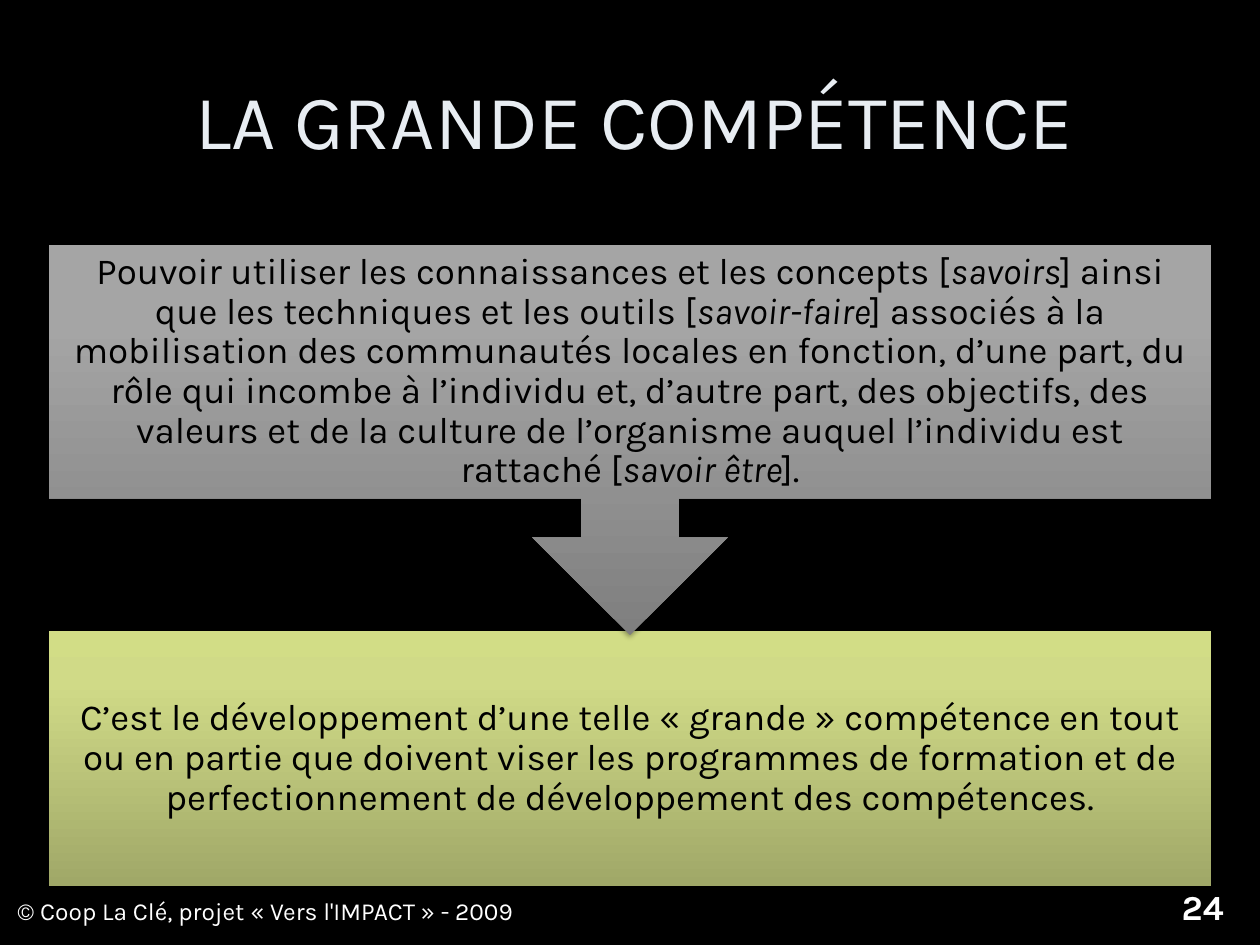
from lxml import etree
from pptx import Presentation
from pptx.dml.color import RGBColor
from pptx.enum.shapes import MSO_SHAPE
from pptx.enum.text import MSO_ANCHOR, PP_ALIGN
from pptx.oxml.ns import qn
from pptx.util import Inches, Pt

RECTANGLE = MSO_SHAPE.RECTANGLE
ARROW_CALLOUT = MSO_SHAPE.UP_ARROW_CALLOUT
LEFT, CENTER, RIGHT = PP_ALIGN.LEFT, PP_ALIGN.CENTER, PP_ALIGN.RIGHT
TOP, MIDDLE = MSO_ANCHOR.TOP, MSO_ANCHOR.MIDDLE

FONT = "Karla"
WIDTH, HEIGHT = Inches(10), Inches(7.5)
COLORS = {
    "background": "000000",
    "title": "E8EDF2",
    "dark text": "000000",
    "light text": "FFFFFF",
    "shadow": "000000",
}
# Gradient stops from bottom to top: percentage and colour
GRAY = [(0, "7F7F7F"), (80, "A5A5A5"), (100, "A5A5A5")]
GREEN = [(0, "A0A868"), (80, "D0DA87"), (100, "D2DD86")]

# Shares of the slide, in percent
BLOCK_LEFT, BLOCK_WIDTH, BLOCK_HEIGHT = 3.9, 92.2, 26.93
COMPETENCE_TOP, GOAL_TOP, CALLOUT_HEIGHT = 25.87, 66.8, 41.33

COMPETENCE = [
    ("Pouvoir utiliser les connaissances et les concepts [", False),
    ("savoirs", True),
    ("] ainsi que les techniques et les outils [", False),
    ("savoir-faire", True),
    ("] associés à la mobilisation des communautés locales en fonction, "
     "d’une part, du rôle qui incombe à l’individu et, d’autre part, des "
     "objectifs, des valeurs et de la culture de l’organisme auquel "
     "l’individu est rattaché [", False),
    ("savoir être", True),
    ("].", False),
]
GOAL = [
    ("C’est le développement d’une telle « grande » compétence en tout ou "
     "en partie que doivent viser les programmes de formation et de "
     "perfectionnement de développement des compétences.", False),
]


def place(left, top, width, height):
    """Turn percentages of the slide into lengths."""
    return (int(WIDTH * left / 100), int(HEIGHT * top / 100),
            int(WIDTH * width / 100), int(HEIGHT * height / 100))


def add_child(parent, tag, **attributes):
    child = etree.SubElement(parent, qn(tag))
    for name, value in attributes.items():
        child.set(name, str(value))
    return child


def add_color(parent, color):
    return add_child(parent, "a:srgbClr", val=color)


def set_gradient(shape, stops):
    """Fill upwards on the slide, whatever the rotation of the shape."""
    shape.fill.gradient()
    gradient = shape._element.spPr.find(qn("a:gradFill"))
    for child in list(gradient):
        gradient.remove(child)
    gradient.set("rotWithShape", "0")
    stop_list = add_child(gradient, "a:gsLst")
    for position, color in stops:
        add_color(add_child(stop_list, "a:gs", pos=position * 1000), color)
    add_child(gradient, "a:lin", ang=270 * 60000, scaled=0)


def set_shadow(shape):
    shape.shadow.inherit = False
    effects = shape._element.spPr.find(qn("a:effectLst"))
    shadow = add_child(effects, "a:outerShdw", blurRad=Pt(3.1), dist=Pt(1.8),
                       dir=90 * 60000, rotWithShape=0)
    add_child(add_color(shadow, COLORS["shadow"]), "a:alpha", val=35000)


def add_block(slide, kind, area, stops, rotation=0):
    shape = slide.shapes.add_shape(kind, *place(*area))
    shape.rotation = rotation
    set_gradient(shape, stops)
    shape.line.fill.background()
    set_shadow(shape)


def add_text(slide, area, runs, size, color, align=LEFT, anchor=TOP,
             bold=False, margin=None, line_spacing=None):
    frame = slide.shapes.add_textbox(*place(*area)).text_frame
    frame.word_wrap = True
    frame.vertical_anchor = anchor
    if margin is not None:
        frame.margin_left = frame.margin_right = Inches(margin)
        frame.margin_top = frame.margin_bottom = Inches(margin)
    paragraph = frame.paragraphs[0]
    paragraph.alignment = align
    paragraph.line_spacing = line_spacing
    for text, italic in runs:
        run = paragraph.add_run()
        run.text = text
        run.font.name = FONT
        run.font.size = Pt(size)
        run.font.bold = bold
        run.font.italic = italic
        run.font.color.rgb = RGBColor.from_string(COLORS[color])


def add_block_text(slide, top, runs):
    add_text(slide, (BLOCK_LEFT, top, BLOCK_WIDTH, BLOCK_HEIGHT), runs, 21,
             "dark text", CENTER, MIDDLE, margin=0.16, line_spacing=0.9)


def main():
    presentation = Presentation()
    presentation.slide_width, presentation.slide_height = WIDTH, HEIGHT
    slide = presentation.slides.add_slide(presentation.slide_layouts[6])
    background = slide.background.fill
    background.solid()
    background.fore_color.rgb = RGBColor.from_string(COLORS["background"])

    # Title
    add_text(slide, (8.3, 4.8, 84.2, 15.6), [("LA GRANDE COMPÉTENCE", False)],
             44, "title", CENTER, MIDDLE)

    # Goal of the training, below the arrow
    add_block(slide, RECTANGLE,
              (BLOCK_LEFT, GOAL_TOP, BLOCK_WIDTH, BLOCK_HEIGHT), GREEN)
    add_block_text(slide, GOAL_TOP, GOAL)

    # Competence, with the arrow pointing down to the goal
    add_block(slide, ARROW_CALLOUT,
              (BLOCK_LEFT, COMPETENCE_TOP, BLOCK_WIDTH, CALLOUT_HEIGHT),
              GRAY, rotation=180)
    add_block_text(slide, COMPETENCE_TOP, COMPETENCE)

    # Footer and slide number
    add_text(slide, (0.4, 94.13, 78.7, 6.93),
             [("© Coop La Clé, projet « Vers l'IMPACT » - 2009", False)],
             14, "light text")
    add_text(slide, (90.2, 93.07, 7.9, 6.93), [("24", False)],
             20, "light text", RIGHT, bold=True)

    presentation.save("out.pptx")


if __name__ == "__main__":
    main()
